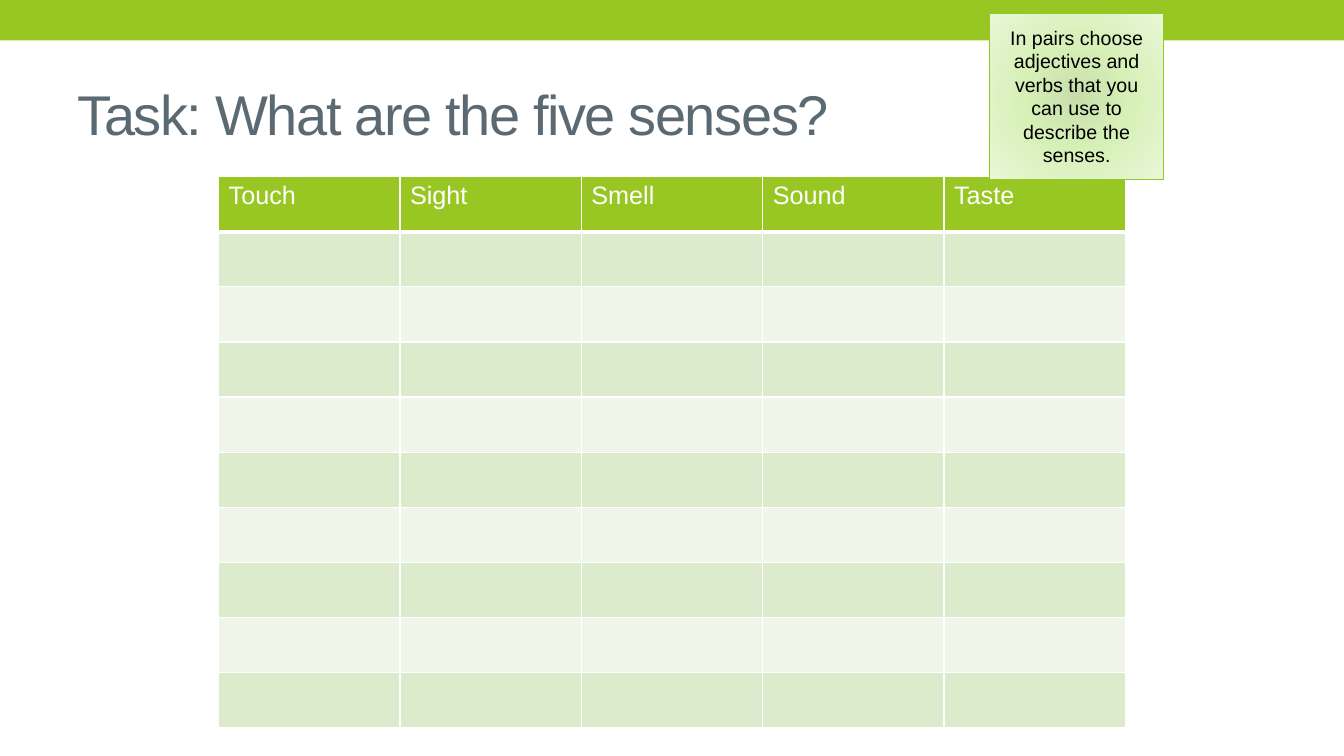
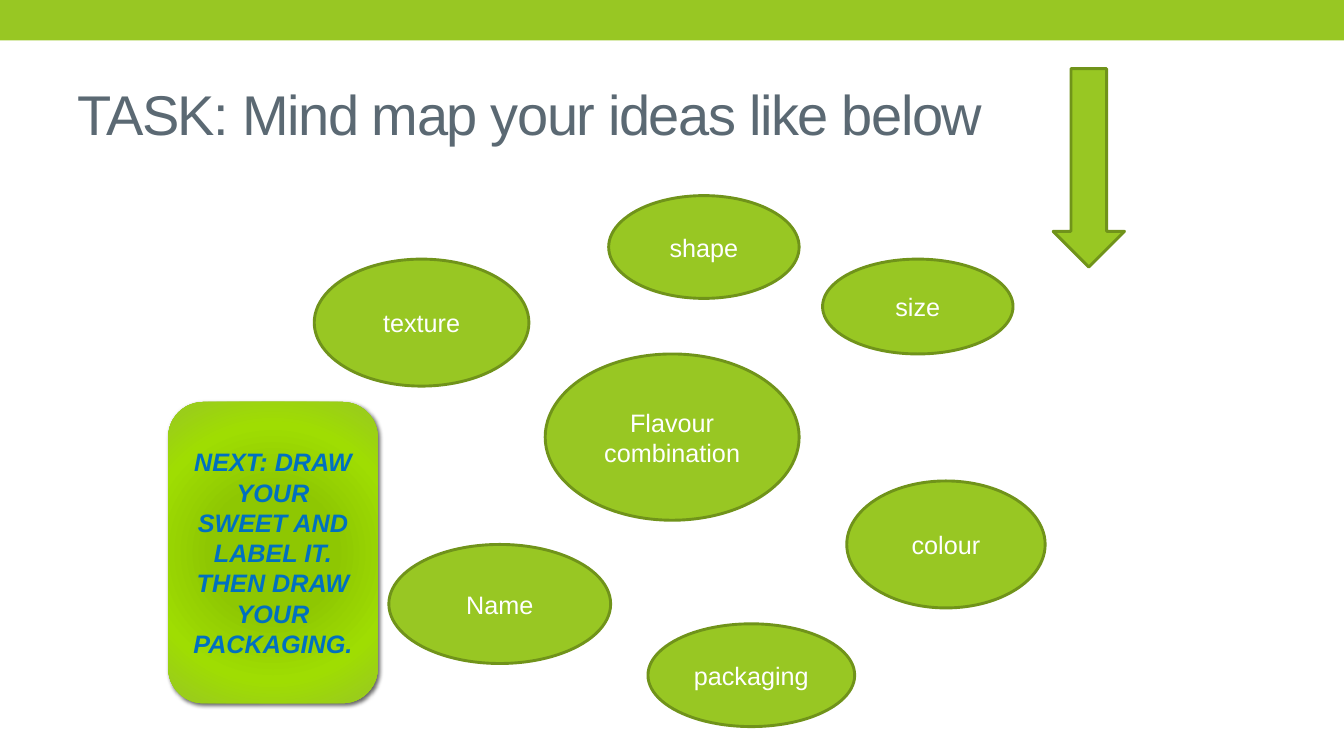
from lxml import etree
from pptx import Presentation
from pptx.dml.color import RGBColor
from pptx.enum.shapes import MSO_SHAPE
from pptx.enum.text import MSO_ANCHOR, PP_ALIGN
from pptx.oxml.ns import qn
from pptx.util import Cm, Pt

RECTANGLE, ROUNDED = MSO_SHAPE.RECTANGLE, MSO_SHAPE.ROUNDED_RECTANGLE
OVAL, DOWN_ARROW = MSO_SHAPE.OVAL, MSO_SHAPE.DOWN_ARROW
LEFT, CENTER, MIDDLE = PP_ALIGN.LEFT, PP_ALIGN.CENTER, MSO_ANCHOR.MIDDLE

GREEN = RGBColor(0x98, 0xC7, 0x23)
DARK_GREEN = RGBColor(0x70, 0x93, 0x1A)
ROW_TINTS = (RGBColor(0xEF, 0xF5, 0xE8), RGBColor(0xDD, 0xEB, 0xCD))
SLATE = RGBColor(0x5B, 0x69, 0x73)
BLUE = RGBColor(0x00, 0x70, 0xC0)
BLACK = RGBColor(0x00, 0x00, 0x00)
WHITE = RGBColor(0xFF, 0xFF, 0xFF)
PALE_GLOW = ((0, RGBColor(0xC7, 0xDE, 0xAA)), (45, RGBColor(0xD7, 0xF0, 0xB7)),
             (100, RGBColor(0xE9, 0xF7, 0xD8)))
BRIGHT_GLOW = ((0, RGBColor(0x8F, 0xC8, 0x00)), (34, RGBColor(0x8E, 0xC7, 0x02)),
               (70, RGBColor(0x9F, 0xDD, 0x02)), (100, GREEN))
FONT = "Arial"


def add_box(slide, kind, box, text="", size=18, color=WHITE, line=(DARK_GREEN, 2.08), glow=None):
    """Add a shape with centred text, filled plain green or with a radial glow."""
    shape = slide.shapes.add_shape(kind, *map(Cm, box))
    shape.shadow.inherit = False
    shape.fill.solid()
    shape.fill.fore_color.rgb = GREEN
    if glow:
        gradient = etree.Element(qn("a:gradFill"), rotWithShape="1")
        stops = etree.SubElement(gradient, qn("a:gsLst"))
        for position, stop_color in glow:
            stop = etree.SubElement(stops, qn("a:gs"), pos=str(position * 1000))
            etree.SubElement(stop, qn("a:srgbClr"), val=str(stop_color))
        circle = etree.SubElement(gradient, qn("a:path"), path="circle")
        etree.SubElement(circle, qn("a:fillToRect"), dict.fromkeys("ltrb", "100000"))
        properties = shape.element.spPr
        properties.replace(properties.find(qn("a:solidFill")), gradient)
    if line:
        shape.line.color.rgb, shape.line.width = line[0], Pt(line[1])
    else:
        shape.line.fill.background()
    if text:
        shape.text_frame.word_wrap = True
        shape.text_frame.vertical_anchor = MIDDLE
        paragraph = shape.text_frame.paragraphs[0]
        paragraph.text, paragraph.alignment = text, CENTER
        paragraph.font.name, paragraph.font.size = FONT, Pt(size)
        paragraph.font.color.rgb = color
    return shape


def add_titled_slide(heading):
    """Add a title-only slide with the shared title style."""
    slide = deck.slides.add_slide(title_only)
    title = slide.shapes.title
    title.left, title.top, title.width, title.height = map(Cm, (1.7, 1.47, 30.48, 2.74))
    title.text_frame.vertical_anchor = MIDDLE
    paragraph = title.text_frame.paragraphs[0]
    paragraph.text, paragraph.alignment = heading, LEFT
    paragraph.font.name, paragraph.font.size = FONT, Pt(40)
    paragraph.font.color.rgb = SLATE
    paragraph.runs[0].font.size = Pt(40)
    paragraph.runs[0].font.fill.solid()
    paragraph.runs[0].font.color.rgb = SLATE
    paragraph.runs[0].font.name = FONT
    paragraph.runs[0].font.language_id = None
    paragraph.runs[0]._r.get_or_add_rPr().set("spc", "-100")
    return slide


deck = Presentation()
deck.slide_width, deck.slide_height = Cm(33.87), Cm(19.05)
title_only = deck.slide_layouts[5]

# Slide 1: the five senses
senses_slide = add_titled_slide("Task: What are the five senses?")

# The top band moves to the master, so that every slide shows it
band = add_box(senses_slide, RECTANGLE, (0, 0, 33.87, 1.02), line=None)
deck.slide_master.shapes.element.insert(2, band.element)

SENSES = ("Touch", "Sight", "Smell", "Sound", "Taste")
ROWS, COLUMN_WIDTH, ROW_HEIGHT = 10, 4.57, 1.39
senses = senses_slide.shapes.add_table(
    ROWS, len(SENSES), Cm(5.51), Cm(4.45),
    Cm(COLUMN_WIDTH * len(SENSES)), Cm(ROW_HEIGHT * ROWS)).table
for column in senses.columns:
    column.width = Cm(COLUMN_WIDTH)
for row_number, row in enumerate(senses.rows):
    row.height = Cm(ROW_HEIGHT)
    for sense, cell in zip(SENSES, row.cells):
        cell.fill.solid()
        cell.fill.fore_color.rgb = ROW_TINTS[row_number % 2] if row_number else GREEN
        if row_number == 0:
            cell.text = sense
            header = cell.text_frame.paragraphs[0].font
            header.name, header.size, header.bold = FONT, Pt(18), False
            header.color.rgb = WHITE
        for order, side in enumerate(("lnL", "lnR", "lnT", "lnB")):
            points = 3 if row_number == 0 and side == "lnB" else 1
            border = etree.Element(qn(f"a:{side}"), w=str(Pt(points)))
            border_fill = etree.SubElement(border, qn("a:solidFill"))
            etree.SubElement(border_fill, qn("a:srgbClr"), val=str(WHITE))
            cell._tc.get_or_add_tcPr().insert(order, border)

add_box(senses_slide, RECTANGLE, (24.94, 0.33, 4.39, 4.19),
        "In pairs choose adjectives and verbs that you can use to describe the senses.",
        size=14, color=BLACK, line=(GREEN, 0.75), glow=PALE_GLOW)

# Slide 2: the mind map
map_slide = add_titled_slide("TASK: Mind map your ideas like below")
add_box(map_slide, DOWN_ARROW, (26.54, 1.73, 1.8, 5))

IDEAS = (
    ("Flavour combination", (13.74, 8.92, 6.4, 4.19)),
    ("size", (20.73, 6.53, 4.8, 2.39)),
    ("colour", (21.34, 12.12, 5, 3.2)),
    ("shape", (15.34, 4.93, 4.8, 2.59)),
    ("texture", (7.92, 6.53, 5.41, 3.2)),
    ("Name", (9.8, 13.72, 5.59, 3)),
    ("packaging", (16.33, 15.72, 5.21, 2.59)),
)
for idea, place in IDEAS:
    add_box(map_slide, OVAL, place, idea)

next_step = add_box(map_slide, ROUNDED, (4.24, 10.13, 5.28, 7.59),
                    "NEXT: DRAW YOUR SWEET AND LABEL IT. THEN DRAW YOUR PACKAGING.",
                    color=BLUE, line=None, glow=BRIGHT_GLOW)
next_font = next_step.text_frame.paragraphs[0].font
next_font.bold = next_font.italic = True
shadow = etree.SubElement(
    next_step.element.spPr.find(qn("a:effectLst")), qn("a:outerShdw"),
    blurRad=str(Pt(3)), dist=str(Pt(2)), dir=str(45 * 60000), rotWithShape="0")
shadow_color = etree.SubElement(shadow, qn("a:srgbClr"), val=str(BLACK))
etree.SubElement(shadow_color, qn("a:alpha"), val="60000")

deck.save("out.pptx")
